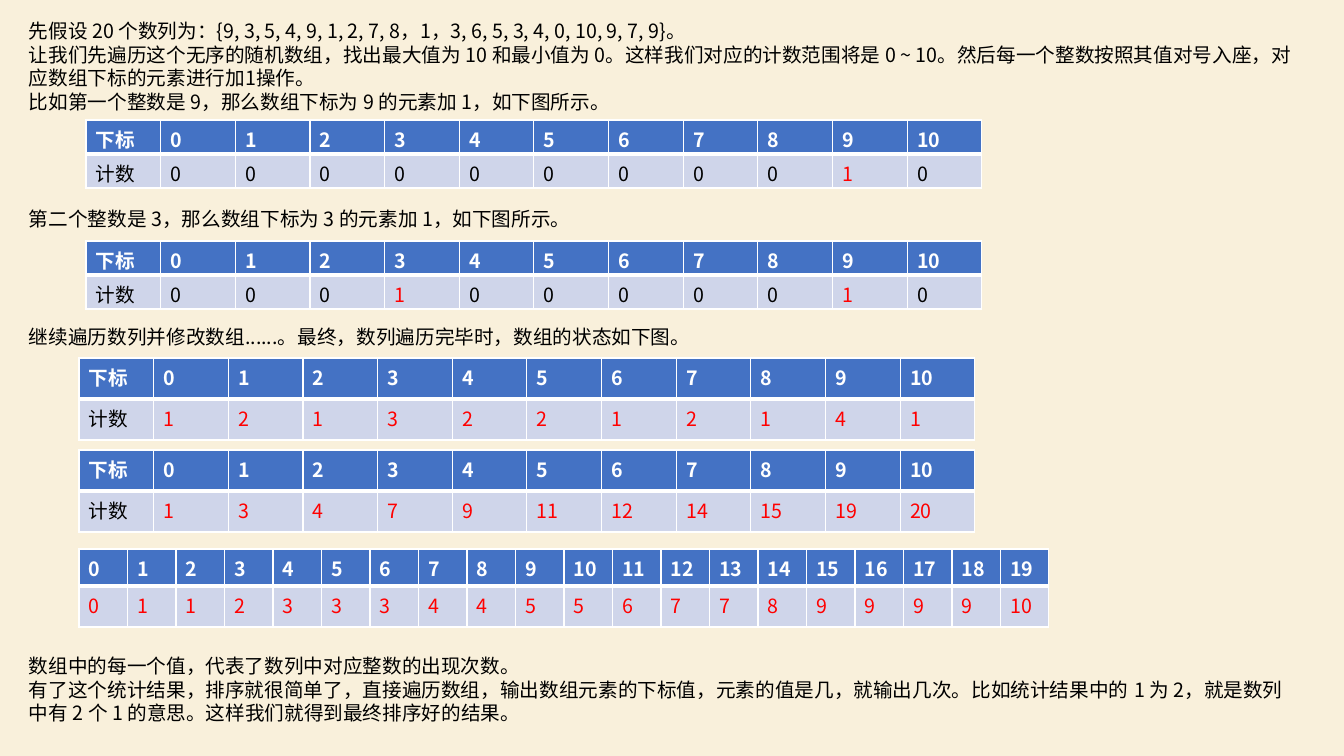
import itertools

import pptx
import pptx.dml.color
import pptx.oxml
import pptx.oxml.ns
import pptx.util

RGBColor = pptx.dml.color.RGBColor
CREAM = RGBColor(0xF9, 0xF0, 0xDB)
BLUE = RGBColor(0x44, 0x72, 0xC4)
PALE_BLUE = RGBColor(0xCF, 0xD5, 0xEA)
WHITE = RGBColor(0xFF, 0xFF, 0xFF)
BLACK = RGBColor(0x00, 0x00, 0x00)
RED = RGBColor(0xFF, 0x00, 0x00)

FONT = "Noto Sans CJK SC"
NUMBERS = [9, 3, 5, 4, 9, 1, 2, 7, 8, 1, 3, 6, 5, 3, 4, 0, 10, 9, 7, 9]

# Top edge in px, and the paragraphs of each block
TEXT_BLOCKS = [
    (19, [
        "先假设 20 个数列为：{9, 3, 5, 4, 9, 1, 2, 7, 8，1，3, 6, 5, 3, 4, 0, 10, 9, 7, 9}。",
        "让我们先遍历这个无序的随机数组，找出最大值为 10 和最小值为 0。这样我们对应的计数范围将是 0 ~ 10。"
        "然后每一个整数按照其值对号入座，对应数组下标的元素进行加1操作。",
        "比如第一个整数是 9，那么数组下标为 9 的元素加 1，如下图所示。",
    ]),
    (207, ["第二个整数是 3，那么数组下标为 3 的元素加 1，如下图所示。"]),
    (325, ["继续遍历数列并修改数组......。最终，数列遍历完毕时，数组的状态如下图。"]),
    (654, [
        "数组中的每一个值，代表了数列中对应整数的出现次数。",
        "有了这个统计结果，排序就很简单了，直接遍历数组，输出数组元素的下标值，元素的值是几，就输出几次。"
        "比如统计结果中的 1 为 2，就是数列中有 2 个 1 的意思。这样我们就得到最终排序好的结果。",
    ]),
]


def px(length):
    return pptx.util.Emu(round(length * 914400 / 100.8))


def format_paragraph(paragraph, color, bold=False):
    for run in paragraph.runs:
        run.font.name = FONT
        run.font.size = pptx.util.Pt(14)
        run.font.bold = bold
        run.font.color.rgb = color
        east_asian = pptx.oxml.parse_xml(
            f'<a:ea {pptx.oxml.ns.nsdecls("a")} typeface="{FONT}"/>')
        run.font._element.find(pptx.oxml.ns.qn("a:latin")).addnext(east_asian)


def add_text_block(slide, top, lines):
    shape = slide.shapes.add_textbox(px(29), px(top), px(1267), px(24 * len(lines)))
    text_frame = shape.text_frame
    text_frame.word_wrap = True
    text_frame.margin_left = text_frame.margin_right = 0
    text_frame.margin_top = text_frame.margin_bottom = 0
    text_frame.text = "\n".join(lines)
    for paragraph in text_frame.paragraphs:
        paragraph.line_spacing = pptx.util.Pt(16.9)
        format_paragraph(paragraph, BLACK)


def set_borders(cell, top_width, bottom_width):
    """Draw white borders, 1 pt at the sides; the order of the edges is fixed."""
    properties = cell._tc.get_or_add_tcPr()
    widths = {"lnL": 1, "lnR": 1, "lnT": top_width, "lnB": bottom_width}
    for index, (edge, width) in enumerate(widths.items()):
        properties.insert(index, pptx.oxml.parse_xml(
            f'<a:{edge} {pptx.oxml.ns.nsdecls("a")} w="{pptx.util.Pt(width)}">'
            f'<a:solidFill><a:srgbClr val="{WHITE}"/></a:solidFill></a:{edge}>'))


def format_cell(cell, value, fill, color, bold=False):
    cell.text = str(value)
    cell.margin_left = cell.margin_right = px(10)
    cell.margin_top = px(5)
    cell.margin_bottom = 0
    cell.fill.solid()
    cell.fill.fore_color.rgb = fill
    format_paragraph(cell.text_frame.paragraphs[0], color, bold)


def add_array_table(slide, left, top, width, row_heights, header, values, red_values):
    """Add a table of indexes over values; cells in red_values are red."""
    frame = slide.shapes.add_table(
        2, len(header), px(left), px(top), px(width), px(sum(row_heights)))
    table = frame.table
    for row, height in zip(table.rows, row_heights):
        row.height = px(height)
    for column, (index, value) in enumerate(zip(header, values)):
        index_cell, value_cell = table.cell(0, column), table.cell(1, column)
        format_cell(index_cell, index, BLUE, WHITE, bold=True)
        set_borders(index_cell, 1, 3)
        color = RED if value in red_values else BLACK
        format_cell(value_cell, value, PALE_BLUE, color)
        set_borders(value_cell, 3, 1)


def add_count_table(slide, left, top, row_height, counts):
    header = ["下标", *range(len(counts))]
    red_values = [count for count in counts if count > 0]
    add_array_table(slide, left, top, 896, (row_height, row_height),
                    header, ["计数", *counts], red_values)


def count_values(numbers):
    return [numbers.count(value) for value in range(max(NUMBERS) + 1)]


def main():
    presentation = pptx.Presentation()
    presentation.slide_width = px(1344)
    presentation.slide_height = px(756)
    slide = presentation.slides.add_slide(presentation.slide_layouts[6])
    slide.background.fill.solid()
    slide.background.fill.fore_color.rgb = CREAM

    for top, lines in TEXT_BLOCKS:
        add_text_block(slide, top, lines)

    final_counts = count_values(NUMBERS)
    running_totals = list(itertools.accumulate(final_counts))
    add_count_table(slide, 86, 120, 34, count_values(NUMBERS[:1]))
    add_count_table(slide, 86, 241, 34, count_values(NUMBERS[:2]))
    add_count_table(slide, 79, 358, 41, final_counts)
    add_count_table(slide, 79, 450, 41, running_totals)
    add_array_table(slide, 79, 549, 970, (37, 41),
                    range(len(NUMBERS)), sorted(NUMBERS), NUMBERS)

    presentation.save("out.pptx")


if __name__ == "__main__":
    main()
